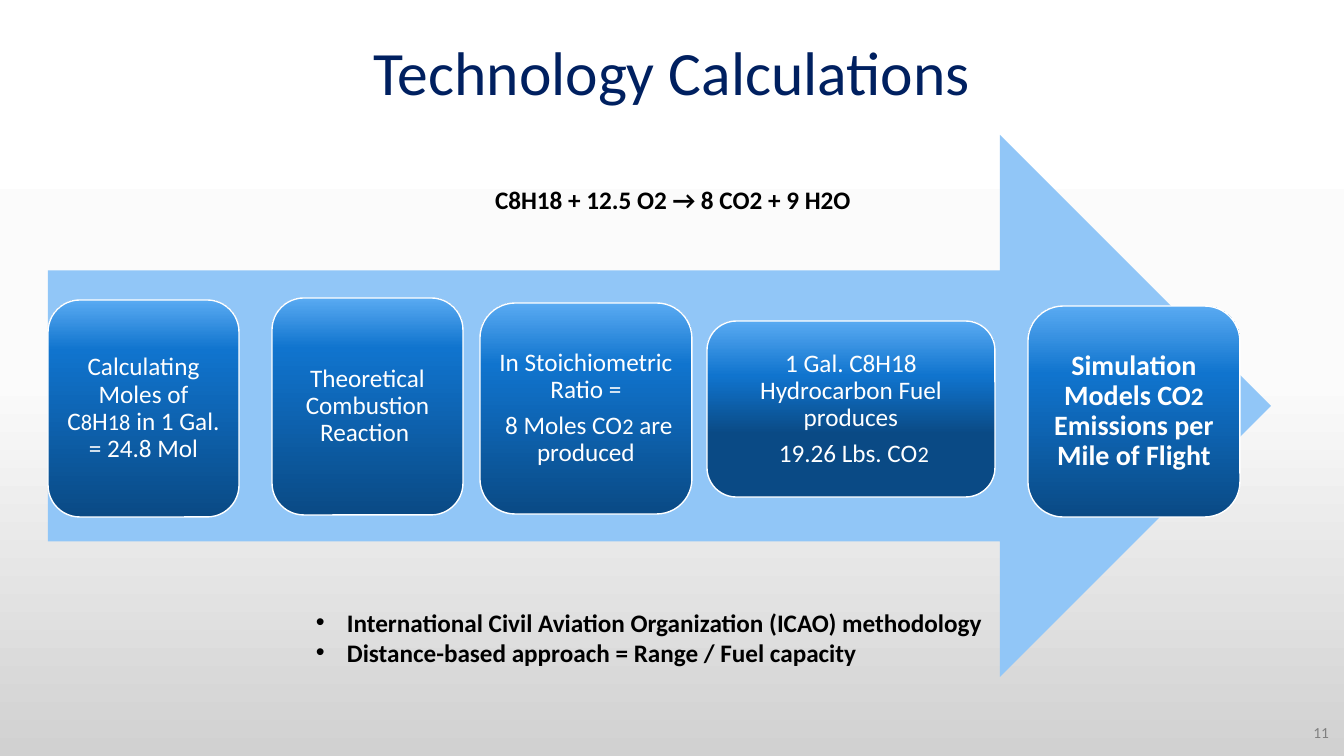
from dataclasses import dataclass

from lxml import etree
from pptx import Presentation
from pptx.dml.color import RGBColor
from pptx.enum.shapes import MSO_SHAPE
from pptx.enum.text import MSO_ANCHOR, PP_ALIGN
from pptx.oxml.ns import qn
from pptx.util import Emu, Pt

ROUNDED = MSO_SHAPE.ROUNDED_RECTANGLE
RIGHT_ARROW = MSO_SHAPE.RIGHT_ARROW
TOP, MIDDLE = MSO_ANCHOR.TOP, MSO_ANCHOR.MIDDLE
LEFT, CENTER, RIGHT = PP_ALIGN.LEFT, PP_ALIGN.CENTER, PP_ALIGN.RIGHT

SLIDE_W, SLIDE_H = 1344, 756
EMU_PER_PX = 12192000 / SLIDE_W


@dataclass(frozen=True)
class Theme:
    font: str = "Calibri"
    title: str = "002060"
    ink: str = "000000"
    muted: str = "808080"
    white: str = "FFFFFF"
    arrow: str = "91C6F7"
    step_shades: tuple = ("0A4A85", "1074CE", "59AAF2")
    backdrop: tuple = ((0, "FFFFFF"), (50, "FBFBFB"), (100, "D1D1D1"))
    title_size: int = 44
    result_size: int = 20
    body_size: int = 18
    number_size: int = 11
    subscript_drop: int = 2


THEME = Theme()

# Box, gradient positions, paragraphs; every second piece of a paragraph is a subscript.
STEPS = [
    ((48, 300, 191, 217), (0, 77, 100),
     [["Calculating Moles of C", "8", "H", "18", " in 1 Gal. = 24.8 Mol"]]),
    ((272, 298, 191, 217), (0, 77, 100),
     [["Theoretical Combustion Reaction "]]),
    ((480, 303, 212, 211), (0, 71, 100),
     [["In Stoichiometric Ratio ="], [" 8 Moles CO", "2", " are produced"]]),
    ((707, 321, 288, 176), (36, 69, 100),
     [["1 Gal. C8H18 Hydrocarbon Fuel produces"], [" 19.26 Lbs. CO", "2"]]),
]
RESULT = ((1028, 306, 212, 211), (0, 68, 100),
          [["Simulation Models CO", "2", " Emissions per Mile of Flight"]])
METHODS = ["International Civil Aviation Organization (ICAO) methodology",
           "Distance-based approach = Range / Fuel capacity"]


def px(length):
    return Emu(round(length * EMU_PER_PX))


def place(box):
    return [px(length) for length in box]


def style(run, size, color, bold=False):
    run.font.name = THEME.font
    run.font.size = Pt(size)
    run.font.bold = bold
    run.font.color.rgb = RGBColor.from_string(color)


def set_gradient(fill, owner, stops, angle):
    """Give a fill any number of (percent, colour) stops; owner holds its XML."""
    fill.gradient()
    fill.gradient_angle = angle
    stop_list = owner.find(".//" + qn("a:gsLst"))
    for old_stop in list(stop_list):
        stop_list.remove(old_stop)
    for percent, color in stops:
        stop = etree.SubElement(stop_list, qn("a:gs"), pos=str(percent * 1000))
        etree.SubElement(stop, qn("a:srgbClr"), val=color)


def add_title(slide, text):
    title = slide.shapes.title
    title.left, title.top, title.width, title.height = place((0, 0, SLIDE_W, 152))
    frame = title.text_frame
    frame.text = text
    frame.vertical_anchor = MIDDLE
    paragraph = frame.paragraphs[0]
    paragraph.alignment = CENTER
    paragraph.line_spacing = 0.9
    style(paragraph.runs[0], THEME.title_size, THEME.title)


def add_flow_arrow(slide, box):
    arrow = slide.shapes.add_shape(RIGHT_ARROW, *place(box))
    arrow.shadow.inherit = False
    arrow.fill.solid()
    arrow.fill.fore_color.rgb = RGBColor.from_string(THEME.arrow)
    arrow.line.fill.background()


def add_step(slide, box, positions, paragraphs, size=THEME.body_size, bold=False, inset=7):
    step = slide.shapes.add_shape(ROUNDED, *place(box))
    step.shadow.inherit = False
    set_gradient(step.fill, step._element.spPr, zip(positions, THEME.step_shades), 90)
    step.line.color.rgb = RGBColor.from_string(THEME.white)
    step.line.width = Pt(1)
    frame = step.text_frame
    frame.word_wrap = True
    frame.vertical_anchor = MIDDLE
    frame.margin_left = frame.margin_right = px(inset)
    frame.margin_top = frame.margin_bottom = px(inset)
    for index, pieces in enumerate(paragraphs):
        paragraph = frame.add_paragraph() if index else frame.paragraphs[0]
        paragraph.alignment = CENTER
        paragraph.line_spacing = 0.9
        paragraph.space_after = Pt(round(size * 0.35))
        for position, piece in enumerate(pieces):
            run = paragraph.add_run()
            run.text = piece
            drop = THEME.subscript_drop if position % 2 else 0
            style(run, size - drop, THEME.white, bold)


def add_label(slide, box, lines, size, color, align=LEFT, anchor=TOP, bold=False):
    label = slide.shapes.add_textbox(*place(box))
    frame = label.text_frame
    frame.word_wrap = True
    frame.vertical_anchor = anchor
    frame.text = "\n".join(lines)
    for paragraph in frame.paragraphs:
        paragraph.alignment = align
        style(paragraph.runs[0], size, color, bold)
    return frame


def add_bullets(frame, indent):
    for paragraph in frame.paragraphs:
        properties = paragraph._p.get_or_add_pPr()
        properties.set("marL", str(px(indent)))
        properties.set("indent", str(px(-indent)))
        etree.SubElement(properties, qn("a:buFont"), typeface="Arial")
        etree.SubElement(properties, qn("a:buChar"), char="•")


def main():
    deck = Presentation()
    deck.slide_width, deck.slide_height = px(SLIDE_W), px(SLIDE_H)
    slide = deck.slides.add_slide(deck.slide_layouts[5])
    set_gradient(slide.background.fill, slide._element, THEME.backdrop, 270)

    add_title(slide, "Technology Calculations")
    add_flow_arrow(slide, (48, 135, 1223, 542))
    for box, positions, paragraphs in STEPS:
        add_step(slide, box, positions, paragraphs)
    add_step(slide, *RESULT, size=THEME.result_size, bold=True, inset=8)

    add_label(slide, (320, 179, 706, 40), ["C8H18 + 12.5 O2 → 8 CO2 + 9 H2O"],
              THEME.body_size, THEME.ink, CENTER, MIDDLE, bold=True)
    methods = add_label(slide, (306, 602, 706, 72), METHODS,
                        THEME.body_size, THEME.ink, bold=True)
    add_bullets(methods, 31)
    add_label(slide, (1290, 712, 49, 40), ["11"],
              THEME.number_size, THEME.muted, RIGHT, MIDDLE)
    deck.save("out.pptx")


if __name__ == "__main__":
    main()
